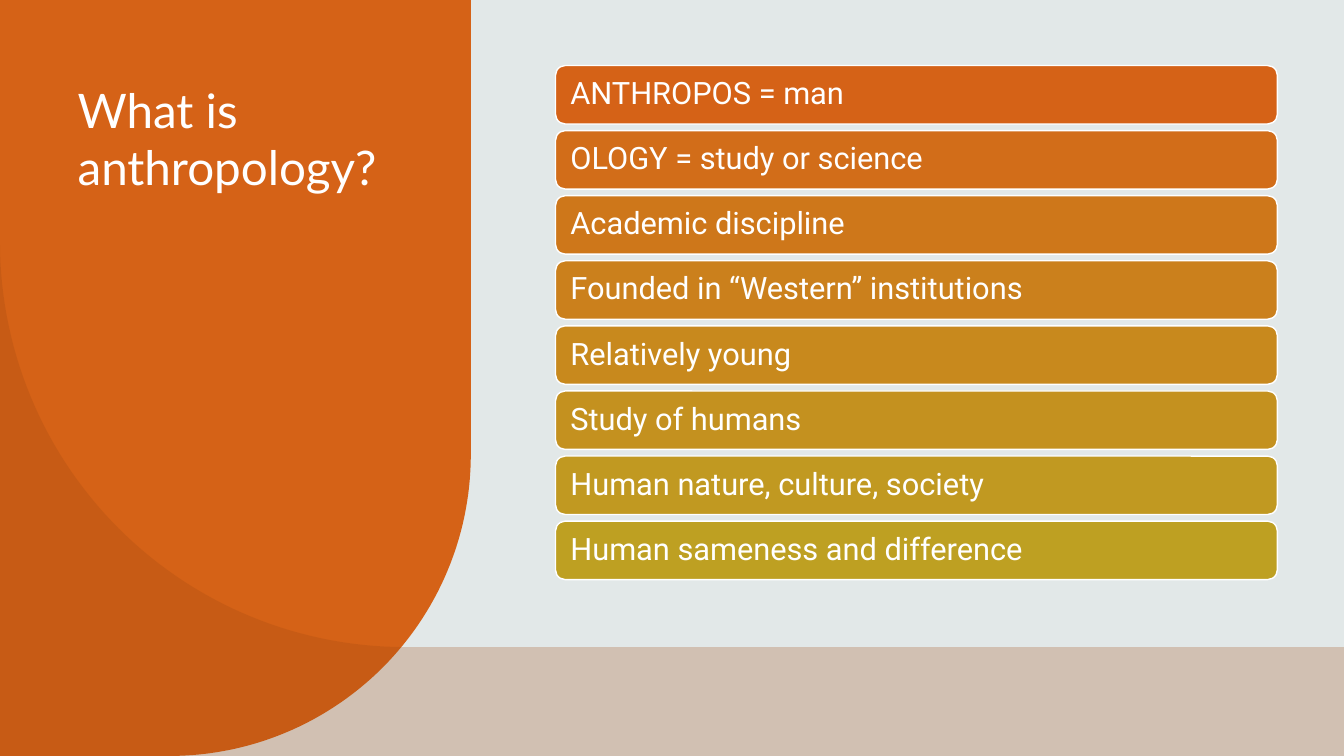
from dataclasses import dataclass
from math import cos, pi, sin

from lxml.etree import SubElement
from pptx import Presentation
from pptx.dml.color import RGBColor
from pptx.enum.shapes import MSO_SHAPE as Shape
from pptx.enum.text import MSO_ANCHOR as Anchor, PP_ALIGN as Align
from pptx.oxml.ns import qn
from pptx.util import Inches, Pt


@dataclass(frozen=True)
class Theme:
    background: str = "E2E8E8"
    panel: str = "D56217"
    floor: str = "A04A11"
    floor_opacity: int = 25
    text: str = "FFFFFF"
    bar_line: str = "FFFFFF"
    bar_fills: tuple = ("D56217", "D26D19", "CE771A", "CB801C",
                        "C8891D", "C4911F", "C19921", "BEA022")
    title_font: str = "Lato"
    title_size: int = 34
    body_font: str = "Roboto"
    body_size: int = 22


def arc(center_x, center_y, radius, start, end, steps=60):
    """Points of an arc; angles in degrees, clockwise from the right."""
    angles = [(start + (end - start) * i / steps) * pi / 180
              for i in range(steps + 1)]
    return [(center_x + radius * cos(a), center_y + radius * sin(a))
            for a in angles]


class SlideBuilder:
    def __init__(self, presentation, theme):
        self.theme = theme
        self.slide = presentation.slides.add_slide(presentation.slide_layouts[5])
        fill = self.slide.background.fill
        fill.solid()
        fill.fore_color.rgb = RGBColor.from_string(theme.background)

    def paint(self, shape, color, opacity=100):
        shape.shadow.inherit = False
        shape.fill.solid()
        shape.fill.fore_color.rgb = RGBColor.from_string(color)
        if opacity < 100:
            solid = shape.element.spPr.find(qn("a:solidFill"))
            alpha = SubElement(solid[0], qn("a:alpha"))
            alpha.set("val", str(opacity * 1000))

    def style_text(self, paragraph, font_name, size):
        paragraph.alignment = Align.LEFT
        for run in paragraph.runs:
            run.font.name = font_name
            run.font.size = Pt(size)
            run.font.color.rgb = RGBColor.from_string(self.theme.text)

    def outline(self, points, color, opacity=100):
        """Filled closed outline through points given in inches."""
        corners = [(Inches(x), Inches(y)) for x, y in points]
        builder = self.slide.shapes.build_freeform(*corners[0])
        builder.add_line_segments(corners[1:], close=True)
        shape = builder.convert_to_shape()
        self.paint(shape, color, opacity)
        shape.line.fill.background()

    def title(self, text, left, top, width, height):
        title = self.slide.shapes.title
        title.left, title.top = Inches(left), Inches(top)
        title.width, title.height = Inches(width), Inches(height)
        frame = title.text_frame
        frame.text = text
        frame.word_wrap = True
        frame.vertical_anchor = Anchor.TOP
        self.style_text(frame.paragraphs[0], self.theme.title_font,
                        self.theme.title_size)
        # The placeholder comes first in the tree, so bring it to the front.
        title.element.getparent().append(title.element)

    def bar(self, text, color, left, top, width, height):
        bar = self.slide.shapes.add_shape(
            Shape.ROUNDED_RECTANGLE, Inches(left), Inches(top),
            Inches(width), Inches(height))
        self.paint(bar, color)
        bar.line.color.rgb = RGBColor.from_string(self.theme.bar_line)
        bar.line.width = Pt(1)
        frame = bar.text_frame
        frame.text = text
        frame.word_wrap = True
        frame.vertical_anchor = Anchor.MIDDLE
        frame.margin_left = frame.margin_right = Inches(0.12)
        frame.margin_top = frame.margin_bottom = Inches(0.09)
        paragraph = frame.paragraphs[0]
        paragraph.line_spacing = 0.9
        self.style_text(paragraph, self.theme.body_font, self.theme.body_size)


def main():
    width, height = 13.33, 7.5
    theme = Theme()
    presentation = Presentation()
    presentation.slide_width = Inches(width)
    presentation.slide_height = Inches(height)
    builder = SlideBuilder(presentation, theme)

    panel_curve = arc(1.68, 4.51, 2.99, 0, 90)
    builder.outline([(0, 0), (4.67, 0), *panel_curve, (0, height)], theme.panel)
    floor_curve = arc(4.02, 2.4, 4.02, 180, 90)
    builder.outline([*floor_curve, (width, 6.42), (width, height), (0, height)],
                    theme.floor, theme.floor_opacity)
    builder.title("What is anthropology?", 0.67, 0.75, 3.67, 4.25)

    facts = [
        "ANTHROPOS = man",
        "OLOGY = study or science",
        "Academic discipline",
        "Founded in “Western” institutions",
        "Relatively young",
        "Study of humans",
        "Human nature, culture, society",
        "Human sameness and difference",
    ]
    first_top, last_top = 0.65, 5.17
    pitch = (last_top - first_top) / (len(facts) - 1)
    for row, (fact, color) in enumerate(zip(facts, theme.bar_fills)):
        builder.bar(fact, color, 5.51, first_top + row * pitch, 7.16, 0.58)

    presentation.save("out.pptx")


if __name__ == "__main__":
    main()
